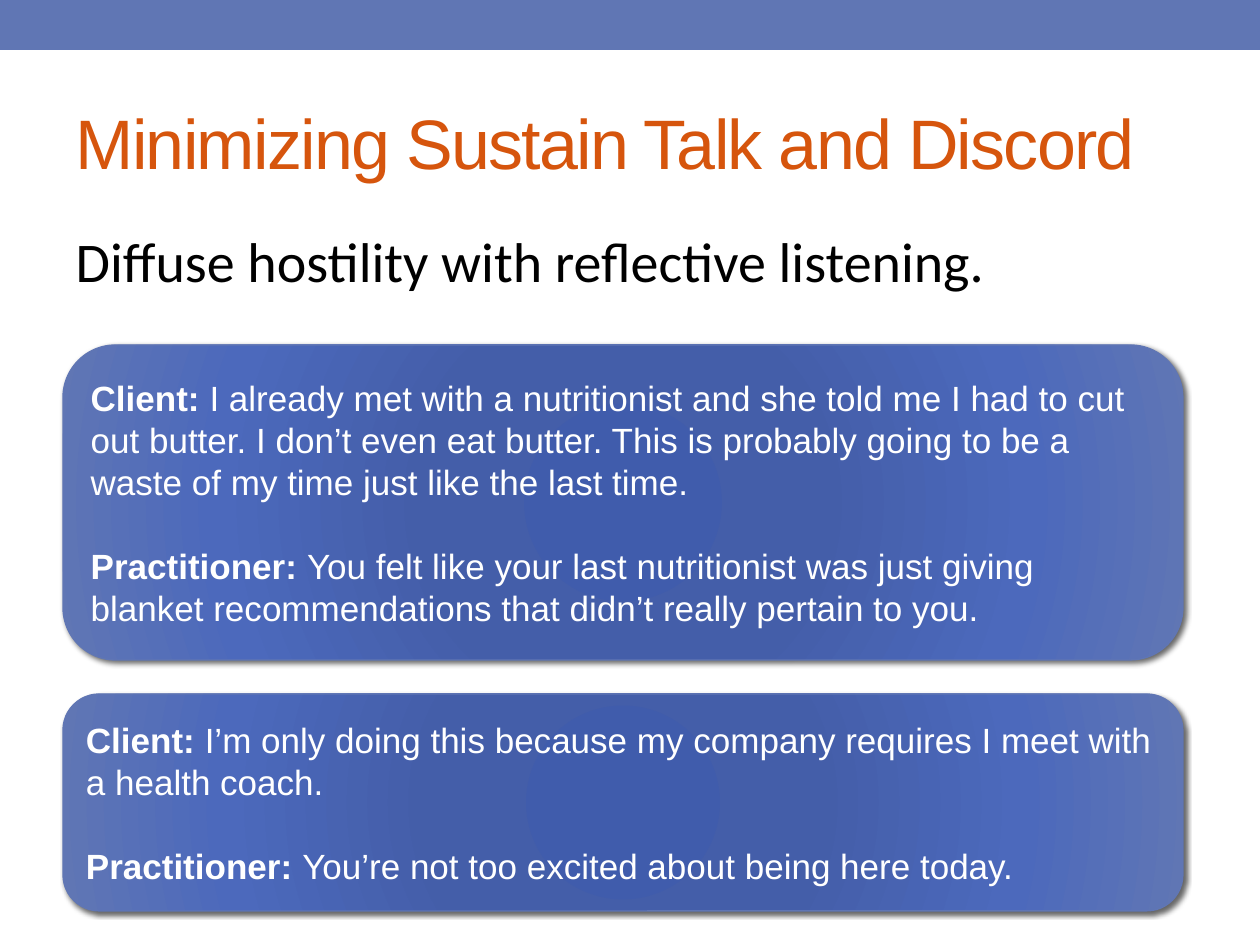
from dataclasses import dataclass

from lxml import etree
from pptx import Presentation
from pptx.dml.color import RGBColor
from pptx.enum.shapes import MSO_SHAPE
from pptx.enum.text import MSO_ANCHOR, MSO_AUTO_SIZE, PP_ALIGN
from pptx.oxml import parse_xml
from pptx.oxml.ns import nsdecls, qn
from pptx.util import Pt

RECT, ROUND = MSO_SHAPE.RECTANGLE, MSO_SHAPE.ROUNDED_RECTANGLE
LEFT, MIDDLE, TOP = PP_ALIGN.LEFT, MSO_ANCHOR.MIDDLE, MSO_ANCHOR.TOP
NO_FIT = MSO_AUTO_SIZE.NONE
TITLE_AND_CONTENT = 1
EMU_PER_PX = 914400 / 126


@dataclass(frozen=True)
class Theme:
    band: str = "6076B4"
    title: str = "D6550D"
    body: str = "000000"
    card_text: str = "FFFFFF"
    shadow: str = "000000"
    # position in percent, colour, from the centre outwards
    gradient: tuple = ((0, "405CAC"), (34, "445EA9"), (70, "4C69BC"), (100, "6076B4"))
    font: str = "Arial"
    body_font: str = "Calibri"
    title_size: int = 40
    body_size: int = 32
    card_size: int = 20
    turn_gap: int = 24


THEME = Theme()

DIALOGUES = [
    ((63, 345, 1120, 315), [
        ("Client: ", "I already met with a nutritionist and she told me I had to cut out "
                     "butter. I don’t even eat butter. This is probably going to be a waste "
                     "of my time just like the last time."),
        ("Practitioner: ", "You felt like your last nutritionist was just giving blanket "
                           "recommendations that didn’t really pertain to you."),
    ]),
    ((63, 694, 1120, 217), [
        ("Client: ", "I’m only doing this because my company requires I meet with a "
                     "health coach."),
        ("Practitioner: ", "You’re not too excited about being here today."),
    ]),
]


def px(n):
    return round(n * EMU_PER_PX)


def place(sp, box):
    sp.left, sp.top, sp.width, sp.height = map(px, box)


def add_run(p, text, font, size, color, bold=None):
    r = p.add_run()
    r.text = text
    r.font.name, r.font.size, r.font.bold = font, Pt(size), bold
    r.font.color.rgb = RGBColor.from_string(color)
    return r


def add_band(s, box):
    sp = s.shapes.add_shape(RECT, *map(px, box))
    sp.shadow.inherit = False
    sp.fill.solid()
    sp.fill.fore_color.rgb = RGBColor.from_string(THEME.band)
    sp.line.fill.background()


def fill_placeholder(sp, box, anchor):
    """Move a placeholder and return its first paragraph, left aligned."""
    place(sp, box)
    tf = sp.text_frame
    tf.word_wrap, tf.auto_size, tf.vertical_anchor = True, NO_FIT, anchor
    p = tf.paragraphs[0]
    p.alignment = LEFT
    return p


def add_title(s, box, text):
    p = fill_placeholder(s.shapes.title, box, MIDDLE)
    r = add_run(p, text, THEME.font, THEME.title_size, THEME.title)
    r.font._element.set("spc", "-100")


def add_body(s, box, text):
    p = fill_placeholder(s.placeholders[1], box, TOP)
    p.space_after = Pt(10)
    pPr = p._p.get_or_add_pPr()
    pPr.set("marL", "0")
    pPr.set("indent", "0")
    etree.SubElement(pPr, qn("a:buNone"))
    add_run(p, text, THEME.body_font, THEME.body_size, THEME.body)


def style_card(sp):
    """Give the card its radial gradient, outline and soft shadow."""
    sp.line.color.rgb = RGBColor.from_string(THEME.band)
    sp.line.width = Pt(0.75)
    stops = "".join(f'<a:gs pos="{pos * 1000}"><a:srgbClr val="{color}"/></a:gs>'
                    for pos, color in THEME.gradient)
    gradient = parse_xml(
        f'<a:gradFill {nsdecls("a")} rotWithShape="1"><a:gsLst>{stops}</a:gsLst>'
        '<a:path path="circle"><a:fillToRect l="100000" t="100000" r="100000" b="100000"/>'
        '</a:path></a:gradFill>')
    shadow = parse_xml(
        f'<a:effectLst {nsdecls("a")}><a:outerShdw blurRad="{Pt(3)}" dist="{Pt(2)}" '
        f'dir="2700000" algn="tl" rotWithShape="0"><a:srgbClr val="{THEME.shadow}">'
        '<a:alpha val="60000"/></a:srgbClr></a:outerShdw></a:effectLst>')
    spPr = sp._element.spPr
    spPr.find(qn("a:prstGeom")).addnext(gradient)
    spPr.find(qn("a:ln")).addnext(shadow)


def add_dialogue(s, box, turns):
    sp = s.shapes.add_shape(ROUND, *map(px, box))
    style_card(sp)
    tf = sp.text_frame
    tf.word_wrap, tf.vertical_anchor = True, MIDDLE
    for i, (speaker, words) in enumerate(turns):
        p = tf.add_paragraph() if i else tf.paragraphs[0]
        p.alignment = LEFT
        if i:
            p.space_before = Pt(THEME.turn_gap)
        for text, bold in ((speaker, True), (words, False)):
            add_run(p, text, THEME.font, THEME.card_size, THEME.card_text, bold)


def main():
    prs = Presentation()
    prs.slide_width, prs.slide_height = px(1260), px(945)
    s = prs.slides.add_slide(prs.slide_layouts[TITLE_AND_CONTENT])
    add_band(s, (0, 0, 1260, 50))
    add_title(s, (63, 73, 1134, 136), "Minimizing Sustain Talk and Discord")
    add_body(s, (63, 220, 1134, 672), "Diffuse hostility with reflective listening.")
    for box, turns in DIALOGUES:
        add_dialogue(s, box, turns)
    prs.save("out.pptx")


if __name__ == "__main__":
    main()
